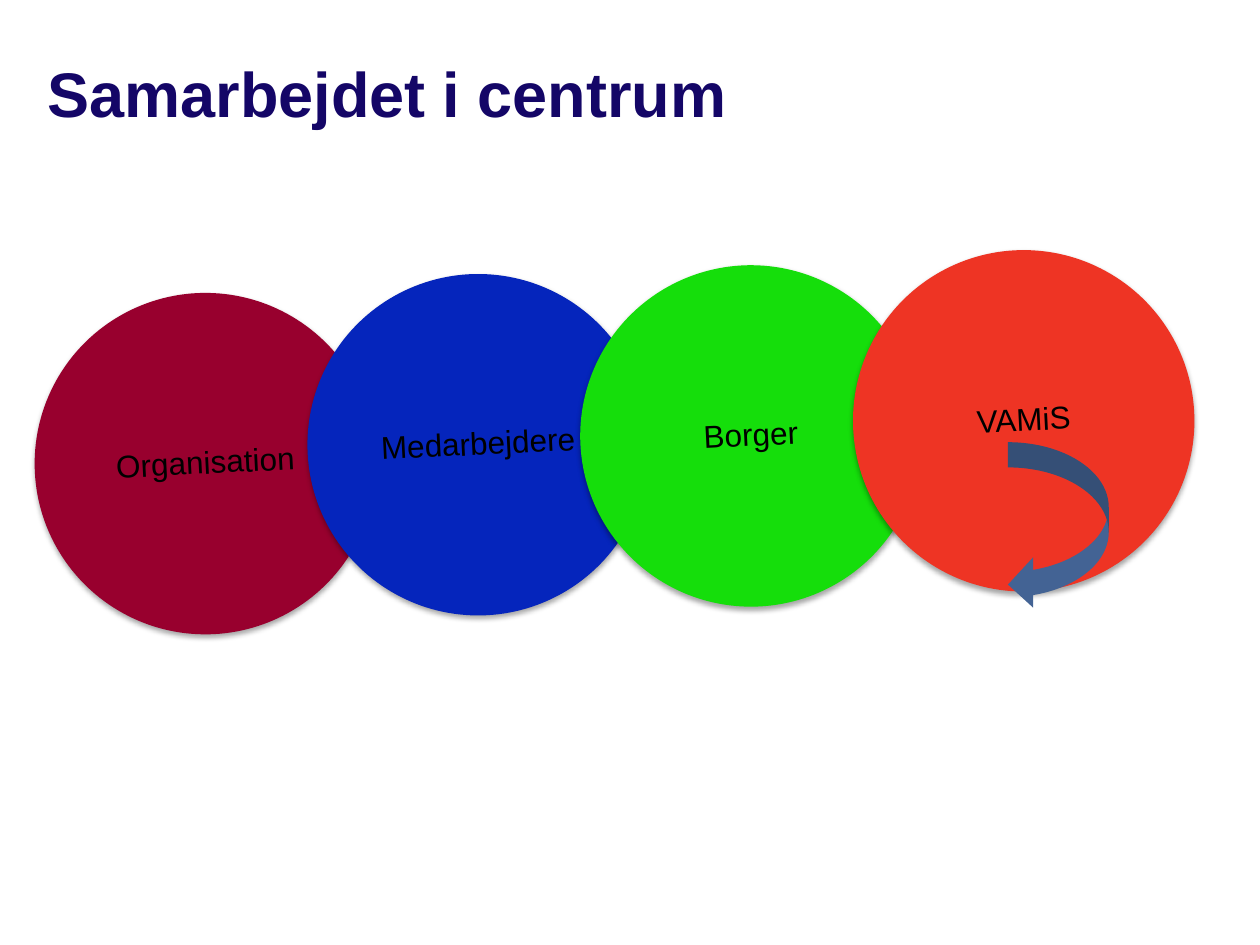
from dataclasses import dataclass

import pptx
import pptx.dml.color
import pptx.enum.shapes
import pptx.enum.text
import pptx.oxml
import pptx.oxml.ns
import pptx.slide
import pptx.text.text
import pptx.util

SLIDE_WIDTH = pptx.util.Inches(10)
SLIDE_HEIGHT = pptx.util.Inches(7.5)


@dataclass(frozen=True)
class Theme:
    font: str = "Arial"
    title_size: int = 36
    label_size: int = 18
    title: str = "140667"
    label: str = "000000"
    arrow: str = "436394"


@dataclass(frozen=True)
class Circle:
    label: str
    color: str
    center_y: float  # inches


THEME = Theme()
DIAMETER = 2.71
FIRST_CENTER = 1.63
PITCH = 2.165
TILT = -3
CIRCLES = (
    Circle("Organisation", "98002E", 3.68),
    Circle("Medarbejdere", "0525BC", 3.53),
    Circle("Borger", "15DE0B", 3.46),
    Circle("VAMiS", "EE3424", 3.34),
)


def rgb(color: str) -> pptx.dml.color.RGBColor:
    return pptx.dml.color.RGBColor.from_string(color)


def style_paragraph(
    paragraph: pptx.text.text._Paragraph, size: int, color: str, bold: bool = False
) -> None:
    paragraph.font.name = THEME.font
    paragraph.font.size = pptx.util.Pt(size)
    paragraph.font.bold = bold
    paragraph.font.color.rgb = rgb(color)


def add_filled_shape(slide: pptx.slide.Slide, kind, left, top, width, height, color: str):
    """Add a preset shape without outline or shadow; lengths are in inches."""
    box = [pptx.util.Inches(length) for length in (left, top, width, height)]
    shape = slide.shapes.add_shape(kind, *box)
    shape.shadow.inherit = False
    shape.fill.solid()
    shape.fill.fore_color.rgb = rgb(color)
    shape.line.fill.background()
    return shape


def add_soft_shadow(shape) -> None:
    effects = shape._element.spPr.find(pptx.oxml.ns.qn("a:effectLst"))
    effects.append(pptx.oxml.parse_xml(
        f'<a:outerShdw {pptx.oxml.ns.nsdecls("a")} blurRad="{pptx.util.Pt(3.1)}" '
        f'dist="{pptx.util.Pt(1.8)}" dir="5400000" rotWithShape="0">'
        '<a:srgbClr val="000000"><a:alpha val="35000"/></a:srgbClr></a:outerShdw>'
    ))


def add_circle(slide: pptx.slide.Slide, circle: Circle, column: int) -> None:
    center_x = FIRST_CENTER + column * PITCH
    shape = add_filled_shape(
        slide, pptx.enum.shapes.MSO_SHAPE.OVAL,
        center_x - DIAMETER / 2, circle.center_y - DIAMETER / 2,
        DIAMETER, DIAMETER, circle.color,
    )
    shape.rotation = TILT
    add_soft_shadow(shape)
    frame = shape.text_frame
    frame.vertical_anchor = pptx.enum.text.MSO_ANCHOR.MIDDLE
    paragraph = frame.paragraphs[0]
    paragraph.text = circle.label
    paragraph.alignment = pptx.enum.text.PP_ALIGN.CENTER
    paragraph.line_spacing = 0.9
    style_paragraph(paragraph, THEME.label_size, THEME.label)


def add_title(slide: pptx.slide.Slide, text: str) -> None:
    box = slide.shapes.add_textbox(
        int(SLIDE_WIDTH * 0.028), int(SLIDE_HEIGHT * 0.059),
        int(SLIDE_WIDTH * 0.921), int(SLIDE_HEIGHT * 0.077),
    )
    frame = box.text_frame
    frame.word_wrap = True
    frame.vertical_anchor = pptx.enum.text.MSO_ANCHOR.MIDDLE
    paragraph = frame.paragraphs[0]
    paragraph.text = text
    style_paragraph(paragraph, THEME.title_size, THEME.title, bold=True)


def main() -> None:
    presentation = pptx.Presentation()
    presentation.slide_width = SLIDE_WIDTH
    presentation.slide_height = SLIDE_HEIGHT
    slide = presentation.slides.add_slide(presentation.slide_layouts[6])
    for column, circle in enumerate(CIRCLES):
        add_circle(slide, circle, column)
    add_title(slide, "Samarbejdet i centrum")
    add_filled_shape(
        slide, pptx.enum.shapes.MSO_SHAPE.CURVED_LEFT_ARROW,
        8, 3.51, 0.8, 1.33, THEME.arrow,
    )
    presentation.save("out.pptx")


if __name__ == "__main__":
    main()
